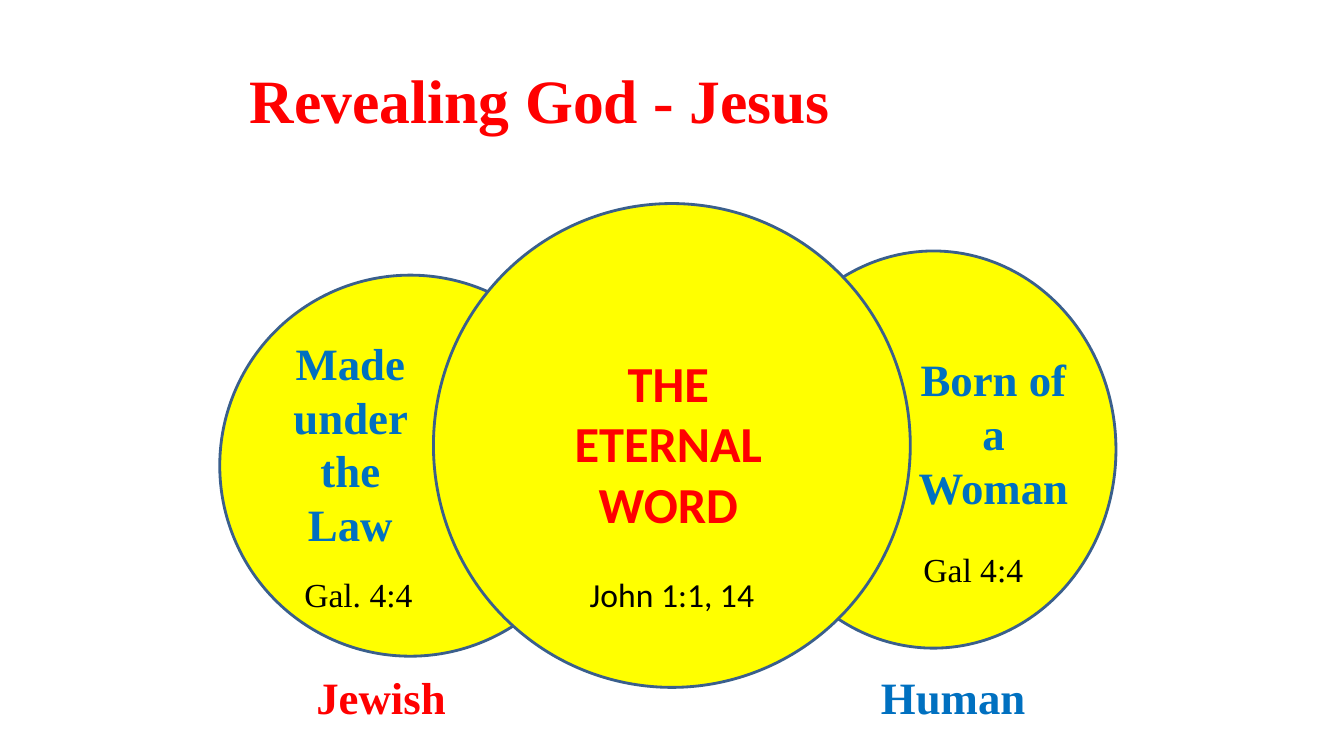
from pptx import Presentation
from pptx.dml.color import RGBColor
from pptx.enum.shapes import MSO_SHAPE
from pptx.enum.text import MSO_ANCHOR, PP_ALIGN
from pptx.util import Inches, Pt

WIDTH, HEIGHT = Inches(13.33), Inches(7.5)
COLUMN, ROW = WIDTH / 100, HEIGHT / 100
SERIF, SANS = "Times New Roman", "Calibri"
RED, BLUE, BLACK, YELLOW, OUTLINE = "FF0000", "0070C0", "000000", "FFFF00", "3A5F8C"


def color(value):
    """Turn a hex string into a colour."""
    return RGBColor.from_string(value)


def place(box):
    """Turn a box of columns and rows into slide lengths."""
    left, top, width, height = box
    return [int(length) for length in (left * COLUMN, top * ROW, width * COLUMN, height * ROW)]


def add_text(slide, box, text, size, font, ink, bold=True,
             align=PP_ALIGN.CENTER, anchor=MSO_ANCHOR.TOP):
    """Write one wrapped paragraph in a box."""
    frame = slide.shapes.add_textbox(*place(box)).text_frame
    frame.word_wrap = True
    frame.vertical_anchor = anchor
    paragraph = frame.paragraphs[0]
    paragraph.alignment = align
    run = paragraph.add_run()
    run.text = text
    run.font.size = Pt(size)
    run.font.name = font
    run.font.bold = bold
    run.font.color.rgb = color(ink)


def add_title(slide, box, text):
    """Write the slide title, centred in its box."""
    add_text(slide, box, text, 44, SERIF, RED, anchor=MSO_ANCHOR.MIDDLE)


def add_circle(slide, box, phrase, verse, label=None, font=SERIF, size=32, ink=BLUE):
    """Draw a circle with its phrase, verse and label, all offset from the circle's box."""
    circle = slide.shapes.add_shape(MSO_SHAPE.OVAL, *place(box))
    circle.shadow.inherit = False
    circle.fill.solid()
    circle.fill.fore_color.rgb = color(YELLOW)
    circle.line.color.rgb = color(OUTLINE)
    circle.line.width = Pt(2)

    def inside(part):
        """Move a part's box by the circle's corner."""
        return box[0] + part[0], box[1] + part[1], part[2], part[3]

    phrase_text, phrase_box = phrase
    add_text(slide, inside(phrase_box), phrase_text, size, font, ink)
    verse_text, verse_box = verse
    add_text(slide, inside(verse_box), verse_text, 24, font, BLACK, bold=False)
    if label:
        label_text, label_box, label_ink = label
        add_text(slide, inside(label_box), label_text, 32, SERIF, label_ink, align=PP_ALIGN.LEFT)


def main():
    """Build and save the slide."""
    presentation = Presentation()
    presentation.slide_width, presentation.slide_height = WIDTH, HEIGHT
    slide = presentation.slides.add_slide(presentation.slide_layouts[6])
    add_title(slide, (6.45, 4.8, 67.5, 16.67), "Revealing God - Jesus")
    add_circle(slide, (55.88, 33.2, 27.15, 52.53),
               ("Born of a Woman", (11.25, 12.67, 13.58, 22.93)),
               ("Gal 4:4", (10.65, 38.8, 11.78, 6.67)),
               ("Human", (8.93, 54.67, 13.58, 8.53), BLUE))
    add_circle(slide, (16.35, 36.4, 28.35, 50.4),
               ("Made under the Law", (3.53, 7.33, 12.38, 30.13)),
               ("Gal. 4:4", (3.53, 38.8, 13.58, 6.67)),
               ("Jewish", (6.45, 51.47, 12.38, 8.53), RED))
    add_circle(slide, (32.25, 26.93, 35.48, 64),
               ("THE ETERNAL WORD", (8.93, 18.93, 17.1, 25.6)),
               ("John 1:1, 14", (5.93, 48.27, 23.63, 6.67)),
               font=SANS, size=36, ink=RED)
    presentation.save("out.pptx")


if __name__ == "__main__":
    main()
